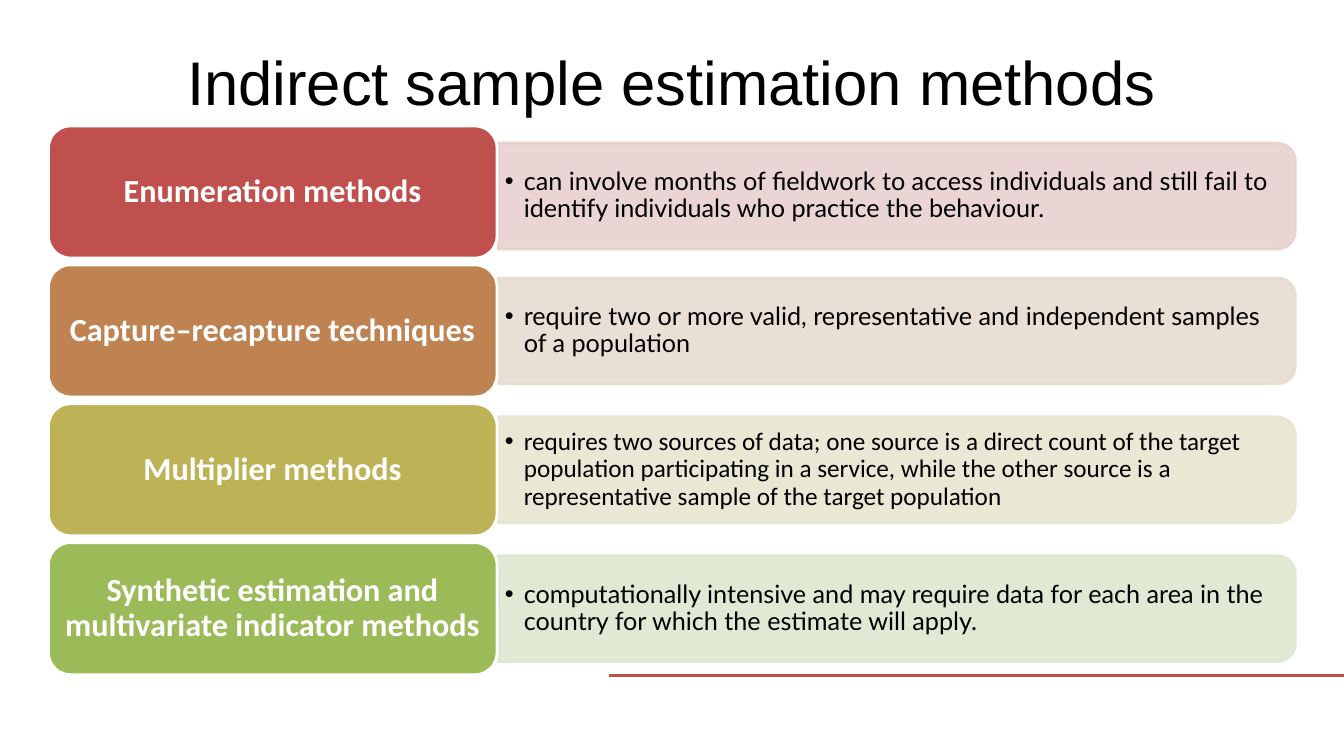
from dataclasses import dataclass

from lxml import etree
from pptx import Presentation
from pptx.dml.color import RGBColor
from pptx.enum import shapes, text
from pptx.oxml import ns
from pptx.util import Pt


@dataclass(frozen=True)
class Theme:
    black: str = "000000"
    white: str = "FFFFFF"
    accent: str = "C0504D"
    title_font: str = "Arial"
    label_font: str = "Calibri"
    title_size: int = 44
    label_size: int = 23
    detail_size: int = 18


THEME = Theme()

# Label, label colour, detail, panel colour, detail font, downward shift of the panel
METHODS = [
    ("Enumeration methods", "C0504D",
     "can involve months of fieldwork to access individuals and still fail to "
     "identify individuals who practice the behaviour.", "E8D0D0", "Lato", 2.9),
    ("Capture–recapture techniques", "BE8351",
     "require two or more valid, representative and independent samples "
     "of a population", "E8DCD0", "Lato", 0),
    ("Multiplier methods", "BDB255",
     "requires two sources of data; one source is a direct count of the target "
     "population participating in a service, while the other source is a "
     "representative sample of the target population", "E7E6D1", "Calibri", 0),
    ("Synthetic estimation and multivariate indicator methods", "9BBB59",
     "computationally intensive and may require data for each area in the "
     "country for which the estimate will apply.", "DEE7D1", "Lato", 0),
]

ROW_TOP, ROW_PITCH = 90, 99.2
LABEL_LEFT, LABEL_WIDTH, LABEL_HEIGHT = 34.6, 320.4, 94.3
PANEL_LEFT, PANEL_WIDTH, PANEL_HEIGHT = 355.7, 569.5, 75.6
DETAIL_WIDTH, DETAIL_HEIGHT = 565.9, 68.4
BULLET_INDENT = 13.5


def add_child(parent, tag, **attributes):
    return etree.SubElement(parent, ns.qn(tag), attributes)


def write(shape, wording, font, size, color, margins, bold=False):
    """Put one vertically centred paragraph in a shape and return it."""
    frame = shape.text_frame
    frame.word_wrap = True
    frame.vertical_anchor = text.MSO_ANCHOR.MIDDLE
    frame.margin_left = frame.margin_right = Pt(margins[0])
    frame.margin_top = frame.margin_bottom = Pt(margins[1])
    frame.text = wording
    para = frame.paragraphs[0]
    para.line_spacing = 0.9
    for span in para.runs:
        span.font.name = font
        span.font.size = Pt(size)
        span.font.bold = bold
        span.font.color.rgb = RGBColor.from_string(color)
    return para


def add_box(page, preset, bounds, fill, outline):
    box = page.shapes.add_shape(preset, *map(Pt, bounds))
    box.shadow.inherit = False
    box.fill.solid()
    box.fill.fore_color.rgb = RGBColor.from_string(fill)
    box.line.color.rgb = RGBColor.from_string(outline)
    box.line.width = Pt(2)
    return box


def add_title(page, wording):
    box = page.shapes.add_textbox(Pt(48), Pt(13), Pt(864), Pt(90))
    para = write(box, wording, THEME.title_font, THEME.title_size, THEME.black, (7.2, 3.6))
    para.line_spacing = 1.0
    para.alignment = text.PP_ALIGN.CENTER


def add_footer_line(page):
    line = page.shapes.add_connector(
        shapes.MSO_CONNECTOR.STRAIGHT, Pt(435), Pt(482.4), Pt(960), Pt(482.4))
    line.line.color.rgb = RGBColor.from_string(THEME.accent)
    line.line.width = Pt(2.25)
    add_child(line._element.spPr, "a:effectLst")


def add_panel(page, middle, color):
    """Add a quarter-turned bar, so that its two rounded corners face right."""
    center = PANEL_LEFT + PANEL_WIDTH / 2
    bounds = (center - PANEL_HEIGHT / 2, middle - PANEL_WIDTH / 2, PANEL_HEIGHT, PANEL_WIDTH)
    panel = add_box(page, shapes.MSO_SHAPE.ROUND_2_SAME_RECTANGLE, bounds, color, color)
    panel.rotation = 90
    for tint in panel._element.spPr.iter(ns.qn("a:srgbClr")):
        add_child(tint, "a:alpha", val="90000")


def add_detail(page, middle, wording, font):
    box = page.shapes.add_textbox(
        Pt(PANEL_LEFT), Pt(middle - DETAIL_HEIGHT / 2), Pt(DETAIL_WIDTH), Pt(DETAIL_HEIGHT))
    para = write(box, wording, font, THEME.detail_size, THEME.black, (5, 2.9))
    para.level = 1
    properties = para._p.get_or_add_pPr()
    properties.set("marL", str(Pt(BULLET_INDENT)))
    properties.set("indent", str(-Pt(BULLET_INDENT)))
    add_child(properties, "a:buFont", typeface="Arial")
    add_child(properties, "a:buChar", char="•")


def add_label(page, top, wording, color):
    bounds = (LABEL_LEFT, top, LABEL_WIDTH, LABEL_HEIGHT)
    label = add_box(page, shapes.MSO_SHAPE.ROUNDED_RECTANGLE, bounds, color, THEME.white)
    para = write(label, wording, THEME.label_font, THEME.label_size, THEME.white,
                 (6, 3.6), bold=True)
    para.alignment = text.PP_ALIGN.CENTER


def main():
    deck = Presentation()
    deck.slide_width, deck.slide_height = Pt(960), Pt(540)
    page = deck.slides.add_slide(deck.slide_layouts[6])
    add_footer_line(page)
    add_title(page, "Indirect sample estimation methods")
    for row, (name, color, detail, tint, font, shift) in enumerate(METHODS):
        top = ROW_TOP + row * ROW_PITCH
        middle = top + LABEL_HEIGHT / 2 + shift
        add_panel(page, middle, tint)
        add_detail(page, middle, detail, font)
        add_label(page, top, name, color)
    deck.save("out.pptx")


if __name__ == "__main__":
    main()
